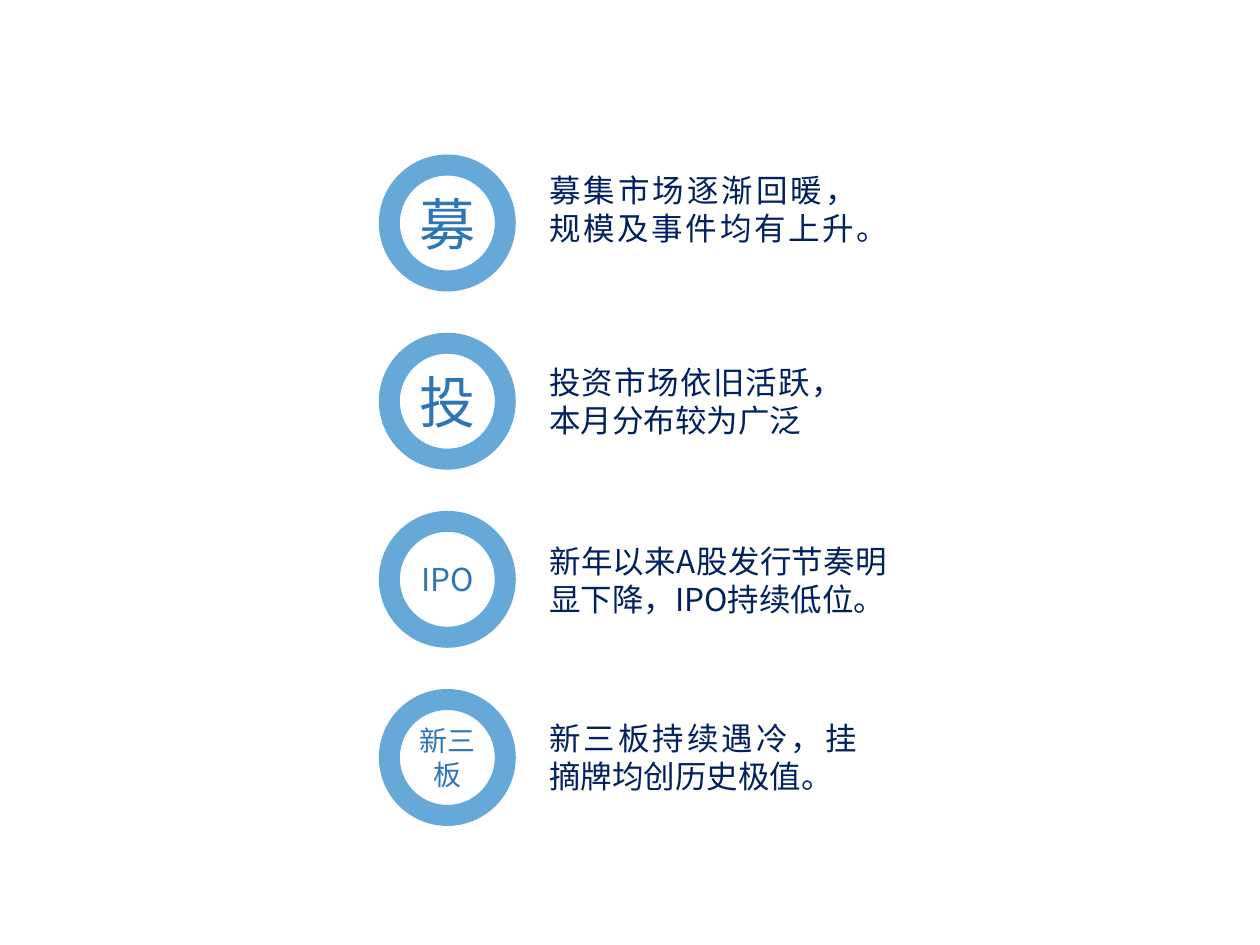
"""Build a slide of four ringed keywords, each with a short market note."""
from lxml import etree
from pptx import Presentation
from pptx.dml.color import RGBColor
from pptx.enum.shapes import MSO_SHAPE as Shape
from pptx.enum.text import MSO_ANCHOR as Anchor, MSO_AUTO_SIZE as Fit, PP_ALIGN as Align
from pptx.oxml.ns import qn
from pptx.util import Pt

RING = RGBColor(0x00, 0x70, 0xC0)
BLUE = RGBColor(0x2E, 0x75, 0xB6)
NAVY = RGBColor(0x00, 0x20, 0x60)

ROWS = [
    ("募", 32, "募集市场逐渐回暖，规模及事件均有上升。", 94.32, 190.08),
    ("投", 32, "投资市场依旧活跃，本月分布较为广泛", 203.76, 182.16),
    ("IPO", 18, "新年以来A股发行节奏明显下降，IPO持续低位。", 306, 207.36),
    ("新三板", 16, "新三板持续遇冷，挂摘牌均创历史极值。", 407.52, 190.08),
]
LEFT, TOP, SIZE, STEP = 222.48, 94.32, 66.24, 101.8


def write(frame, text, size, face, color, align):
    frame.word_wrap = True
    para = frame.paragraphs[0]
    para.alignment = align
    para.line_spacing = Pt(size * 1.2)
    run = para.add_run()
    run.text = text
    font = run.font
    font.size = Pt(size)
    font.name = face
    font.color.rgb = color
    etree.SubElement(font._element, qn("a:ea"), typeface=face)


deck = Presentation()
deck.slide_width, deck.slide_height = Pt(720), Pt(540)
slide = deck.slides.add_slide(deck.slide_layouts[6])

for row, (word, size, note, top, width) in enumerate(ROWS):
    ring = slide.shapes.add_shape(
        Shape.OVAL, Pt(LEFT), Pt(TOP + row * STEP), Pt(SIZE), Pt(SIZE))
    ring.shadow.inherit = False
    ring.fill.background()
    ring.line.width = Pt(12)
    ring.line.color.rgb = RING
    tint = ring.line._ln.find(".//" + qn("a:srgbClr"))
    etree.SubElement(tint, qn("a:alpha"), val="60000")
    ring.text_frame.vertical_anchor = Anchor.MIDDLE
    write(ring.text_frame, word, size, "Noto Sans CJK JP", BLUE, Align.CENTER)

    box = slide.shapes.add_textbox(Pt(306.72), Pt(top), Pt(width), Pt(51.12))
    box.text_frame.auto_size = Fit.SHAPE_TO_FIT_TEXT
    write(box.text_frame, note, 18, "Noto Sans CJK SC", NAVY, Align.JUSTIFY)

deck.save("out.pptx")
